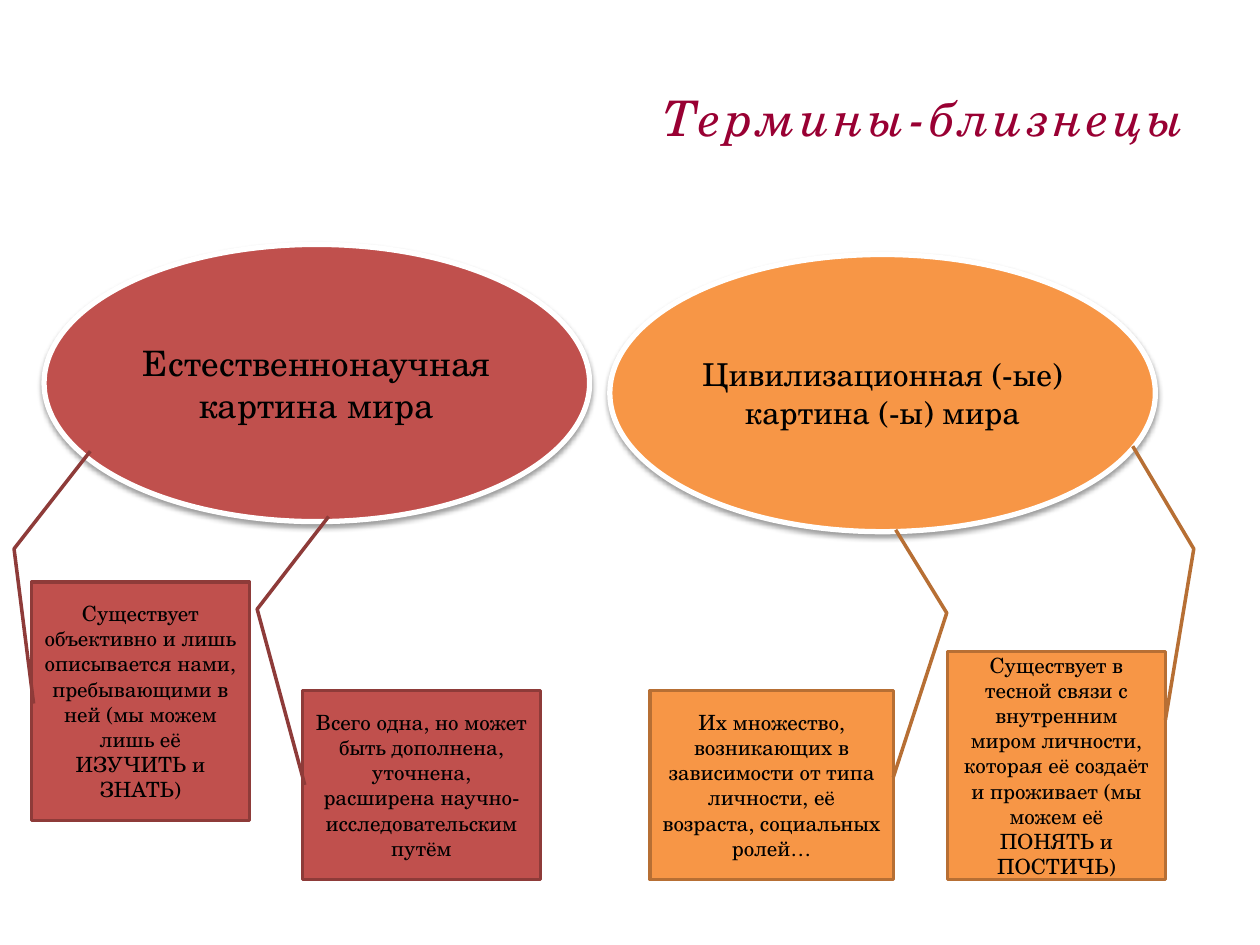
"""Builds a slide comparing two twin terms, each with two callouts."""
from lxml import etree
from pptx import Presentation
from pptx.dml.color import RGBColor
from pptx.enum.shapes import MSO_SHAPE
from pptx.enum.text import MSO_ANCHOR, PP_ALIGN
from pptx.oxml import parse_xml
from pptx.util import Inches, Pt

ELLIPSE = MSO_SHAPE.OVAL
CALLOUT = MSO_SHAPE.LINE_CALLOUT_2
MIDDLE = MSO_ANCHOR.MIDDLE
CENTER = PP_ALIGN.CENTER
RIGHT = PP_ALIGN.RIGHT

FONT = "TeX Gyre Schola"
CRIMSON = RGBColor(0x99, 0x00, 0x33)
RED = RGBColor(0xC0, 0x50, 0x4D)
DARK_RED = RGBColor(0x8E, 0x3B, 0x39)
ORANGE = RGBColor(0xF7, 0x96, 0x46)
DARK_ORANGE = RGBColor(0xB7, 0x6F, 0x34)
WHITE = RGBColor(0xFF, 0xFF, 0xFF)
BLACK = RGBColor(0x00, 0x00, 0x00)

SHADOW = (
    '<a:outerShdw xmlns:a="http://schemas.openxmlformats.org/drawingml/2006/main"'
    ' blurRad="40000" dist="20000" dir="5400000" rotWithShape="0">'
    '<a:srgbClr val="000000"><a:alpha val="38000"/></a:srgbClr></a:outerShdw>'
)


def write_text(shape, text, alignment, color, **font_values):
    frame = shape.text_frame
    frame.word_wrap = True
    frame.vertical_anchor = MIDDLE
    paragraph = frame.paragraphs[0]
    paragraph.alignment = alignment
    run = paragraph.add_run()
    run.text = text
    run.font.color.rgb = color
    for name, value in {"name": FONT, **font_values}.items():
        setattr(run.font, name, value)
    return run


def add_filled_shape(slide, kind, place, fill, line, width, text, size):
    shape = slide.shapes.add_shape(kind, *map(Inches, place))
    shape.shadow.inherit = False
    shape.fill.solid()
    shape.fill.fore_color.rgb = fill
    shape.line.color.rgb = line
    shape.line.width = Pt(width)
    write_text(shape, text, CENTER, BLACK, size=Pt(size))
    return shape


presentation = Presentation()
presentation.slide_width = Inches(10)
presentation.slide_height = Inches(7.5)
slide = presentation.slides.add_slide(presentation.slide_layouts[5])

title = slide.shapes.title
title_place = {"left": 0.5, "top": 0.3, "width": 9, "height": 1.25}
for name, value in title_place.items():
    setattr(title, name, Inches(value))
title_run = write_text(title, "Термины-близнецы", RIGHT, CRIMSON, size=Pt(28), italic=True)
title_run.font._element.set("spc", "250")

terms = [
    (0.35, 1.94, RED, "Естественнонаучная картина мира", 20),
    (4.84, 2.02, ORANGE, "Цивилизационная (-ые) картина (-ы) мира", 18),
]
for left, top, fill, text, size in terms:
    ellipse = add_filled_shape(
        slide, ELLIPSE, (left, top, 4.33, 2.2), fill, WHITE, 3, text, size
    )
    effects = ellipse._element.spPr.find("{*}effectLst")
    etree.ElementBase.append(effects, parse_xml(SHADOW))

callouts = [
    ((0.25, 4.62, 1.73, 1.89), RED, DARK_RED,
     (0.514, 0.013, -0.139, -0.084, -0.548, 0.269),
     "Существует объективно и лишь описывается нами, пребывающими в ней "
     "(мы можем лишь её ИЗУЧИТЬ и ЗНАТЬ)"),
    ((2.4, 5.48, 1.89, 1.5), RED, DARK_RED,
     (0.498, 0.005, -0.433, -0.192, -0.92, 0.113),
     "Всего одна, но может быть дополнена, уточнена, расширена "
     "научно-исследовательским путём"),
    ((5.16, 5.48, 1.93, 1.5), ORANGE, DARK_ORANGE,
     (0.464, 1.004, -0.414, 1.216, -0.853, 1.013),
     "Их множество, возникающих в зависимости от типа личности, её возраста, "
     "социальных ролей…"),
    ((7.52, 5.17, 1.73, 1.81), ORANGE, DARK_ORANGE,
     (0.301, 0.998, -0.445, 1.126, -0.896, 0.849),
     "Существует в тесной связи с внутренним миром личности, которая её создаёт "
     "и проживает (мы можем её ПОНЯТЬ и ПОСТИЧЬ)"),
]
for place, fill, line, leader, text in callouts:
    callout = add_filled_shape(slide, CALLOUT, place, fill, line, 2, text, 12)
    for index, value in enumerate(leader):
        callout.adjustments[index] = round(value, 2)

presentation.save("out.pptx")
